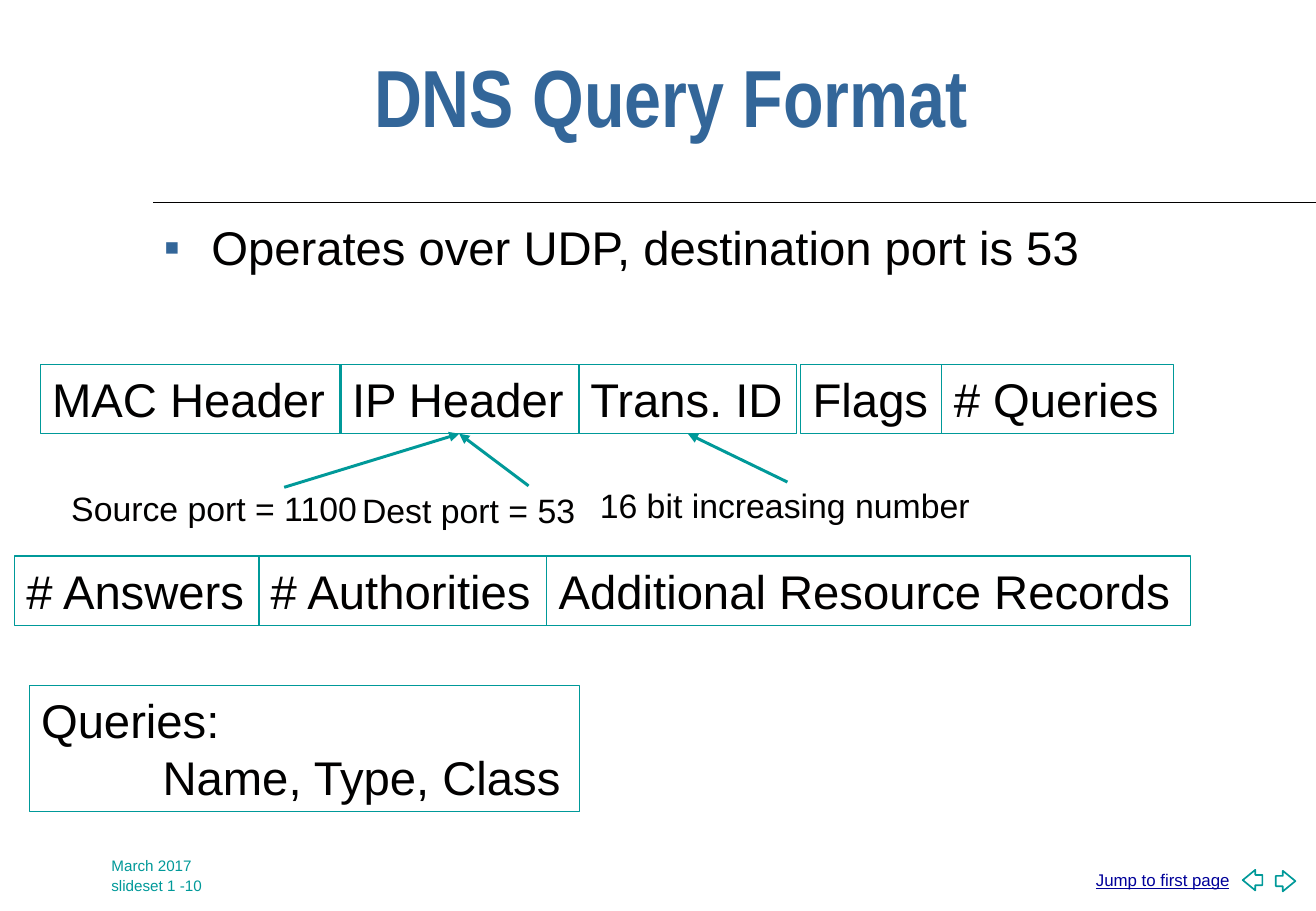
from dataclasses import dataclass

from lxml import etree
from pptx import Presentation
from pptx.dml.color import RGBColor
from pptx.enum.shapes import MSO_CONNECTOR as Connector, MSO_SHAPE as Preset
from pptx.enum.text import MSO_ANCHOR as Anchor, MSO_AUTO_SIZE as AutoSize
from pptx.oxml.ns import qn
from pptx.util import Cm, Pt


@dataclass(frozen=True)
class Theme:
    ink: str = "010000"
    teal: str = "009999"
    blue: str = "336699"
    link: str = "000099"
    white: str = "FFFFFF"
    font: str = "Arial"
    title_font: str = "Arial Narrow"
    title_size: int = 48
    field_size: int = 28
    label_size: int = 20
    link_size: int = 10
    footer_size: int = 9


@dataclass(frozen=True)
class Field:
    text: str
    left: float
    width: float


@dataclass(frozen=True)
class Note:
    text: str
    left: float
    top: float
    width: float
    start: tuple[float, float]
    target: tuple[float, float]


THEME = Theme()
FIELD_HEIGHT = 1.45
IP_HEADER_FOOT = (9.6, 9.07)

# Packet fields, keyed by the top of their row
FIELD_ROWS = {
    7.62: [
        Field("MAC Header", 0.84, 6.3),
        Field("IP Header", 7.11, 5),
        Field("Trans. ID", 12.09, 4.57),
        Field("Flags", 16.74, 2.95),
        Field("# Queries", 19.69, 4.85),
    ],
    11.63: [
        Field("# Answers", 0.3, 5.13),
        Field("# Authorities", 5.41, 6.02),
        Field("Additional Resource Records", 11.43, 13.46),
    ],
}

NOTES = [
    Note("16 bit increasing number", 12.29, 10.01, 8.31, (16.46, 10.08), (14.38, 9.07)),
    Note("Dest port = 53", 7.32, 10.11, 5, (11.05, 10.16), IP_HEADER_FOOT),
    Note("Source port = 1100", 1.24, 10.08, 6.53, (5.94, 10.19), IP_HEADER_FOOT),
]


def rgb(color: str) -> RGBColor:
    return RGBColor.from_string(color)


def add_text(page, text: str, left: float, top: float, width: float, height: float, *,
             size: int, color: str = THEME.ink, font: str = THEME.font,
             bold: bool = False, underline: bool = False, wrap: bool = True,
             anchor=Anchor.TOP, spacing: float | None = None,
             outline: str | None = None):
    """Add a text box with one paragraph per line of text."""
    box = page.shapes.add_textbox(Cm(left), Cm(top), Cm(width), Cm(height))
    frame = box.text_frame
    frame.word_wrap = wrap
    frame.auto_size = AutoSize.NONE if wrap else AutoSize.SHAPE_TO_FIT_TEXT
    frame.vertical_anchor = anchor
    frame.text = text
    for para in frame.paragraphs:
        if spacing:
            para.line_spacing = spacing
        for span in para.runs:
            span.font.name = font
            span.font.size = Pt(size)
            span.font.bold = bold
            span.font.underline = underline
            span.font.color.rgb = rgb(color)
    if outline:
        box.line.color.rgb = rgb(outline)
        box.line.width = Pt(0.75)
    return box


def add_bullet(para, mark: str, color: str, percent: int, indent: float) -> None:
    props = para._p.get_or_add_pPr()
    props.set("marL", str(Cm(indent)))
    props.set("indent", str(-Cm(indent)))
    bullet_color = etree.SubElement(props, qn("a:buClr"))
    etree.SubElement(bullet_color, qn("a:srgbClr"), val=color)
    etree.SubElement(props, qn("a:buSzPct"), val=str(percent * 1000))
    etree.SubElement(props, qn("a:buFont"), typeface=THEME.font)
    etree.SubElement(props, qn("a:buChar"), char=mark)


def add_line(page, start: tuple[float, float], end: tuple[float, float], *,
             color: str, width: float, arrow: bool = False) -> None:
    line = page.shapes.add_connector(
        Connector.STRAIGHT, Cm(start[0]), Cm(start[1]), Cm(end[0]), Cm(end[1]))
    line.line.color.rgb = rgb(color)
    line.line.width = Pt(width)
    if arrow:
        etree.SubElement(line.line._get_or_add_ln(), qn("a:tailEnd"), type="triangle")
    etree.SubElement(line._element.spPr, qn("a:effectLst"))


def add_page_arrow(page, preset, left: float, top: float) -> None:
    shape = page.shapes.add_shape(preset, Cm(left), Cm(top), Cm(0.41), Cm(0.43))
    shape.adjustments[0] = 0.5
    shape.adjustments[1] = 0.64
    shape.shadow.inherit = False
    shape.fill.solid()
    shape.fill.fore_color.rgb = rgb(THEME.white)
    shape.line.color.rgb = rgb(THEME.teal)
    shape.line.width = Pt(1)


def main() -> None:
    deck = Presentation()
    deck.slide_width, deck.slide_height = Cm(27.51), Cm(19.05)
    page = deck.slides.add_slide(deck.slide_layouts[6])

    # Page navigation and title rule
    add_text(page, "Jump to first page", 22.66, 18.06, 3.38, 0.99,
             size=THEME.link_size, color=THEME.link, underline=True)
    add_page_arrow(page, Preset.LEFT_ARROW, 25.98, 18.19)
    add_page_arrow(page, Preset.RIGHT_ARROW, 26.67, 18.21)
    add_line(page, (3.2, 4.24), (27.51, 4.24), color=THEME.ink, width=0.75)

    # Title and bullet
    add_text(page, "DNS Query Format", 7.57, 0.64, 18.34, 3.18,
             size=THEME.title_size, color=THEME.blue, font=THEME.title_font,
             bold=True, anchor=Anchor.MIDDLE, spacing=0.7)
    body = add_text(page, "Operates over UDP, destination port is 53",
                    3.2, 4.45, 23.62, 1.7, size=THEME.field_size)
    add_bullet(body.text_frame.paragraphs[0], "■", THEME.blue, 50, 0.97)

    # Footer
    for text, top in (("March 2017", 17.78), ("slideset 1 -10", 18.21)):
        add_text(page, text, 2.08, top, 3.2, 0.43,
                 size=THEME.footer_size, color=THEME.teal)

    # Packet fields
    for top, fields in FIELD_ROWS.items():
        for field in fields:
            add_text(page, field.text, field.left, top, field.width, FIELD_HEIGHT,
                     size=THEME.field_size, wrap=False, outline=THEME.teal)

    # Query contents
    queries = add_text(page, "Queries:\nName, Type, Class", 0.61, 14.33, 11.51, 2.64,
                       size=THEME.field_size, wrap=False, outline=THEME.teal)
    contents = queries.text_frame.paragraphs[1]
    contents._p.get_or_add_pPr().set("marL", str(Cm(2.54)))

    # Notes pointing at fields
    for note in NOTES:
        add_line(page, note.start, note.target, color=THEME.teal, width=1.75, arrow=True)
        add_text(page, note.text, note.left, note.top, note.width, 1.12,
                 size=THEME.label_size, wrap=False)

    deck.save("out.pptx")


if __name__ == "__main__":
    main()
